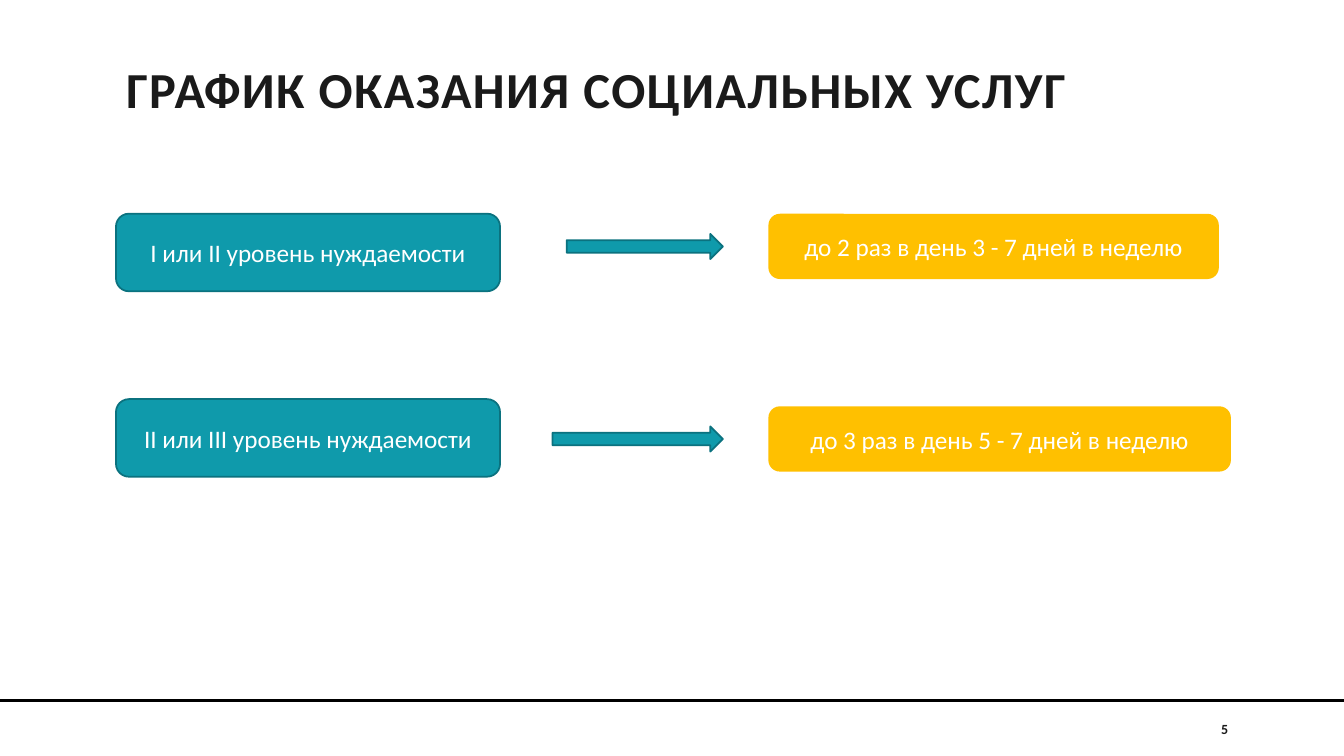
"""Build the slide with the schedule of social services."""
from dataclasses import dataclass

from lxml import etree
from pptx import Presentation, util as u
from pptx.dml.color import RGBColor
from pptx.enum import shapes, text
from pptx.oxml.ns import qn


@dataclass(frozen=True)
class Theme:
    font: str = "Calibri"
    ink: str = "1A1A1A"
    rule: str = "000000"
    white: str = "FFFFFF"
    teal: str = "0F9AAB"
    edge: str = "0B727F"
    gold: str = "FFC000"
    head: int = 36
    body: int = 18
    foot: int = 10
    thin: float = 1.25
    thick: float = 2.5


@dataclass(frozen=True)
class Box:
    left: float
    top: float
    width: float
    height: float

    def dims(self) -> list[u.Inches]:
        return [u.Inches(n) for n in (self.left, self.top, self.width, self.height)]


@dataclass(frozen=True)
class Row:
    level: str
    visits: str
    need: Box
    arrow: Box
    plan: Box


T = Theme()
WIDE, HIGH, LINE = 13.33, 7.5, 6.95
KIND = shapes.MSO_SHAPE
ROWS = [
    Row("I или II уровень нуждаемости", "до 2 раз в день 3 - 7 дней в неделю",
        Box(1.15, 2.12, 3.81, 0.77), Box(5.62, 2.32, 1.55, 0.25),
        Box(7.63, 2.13, 4.45, 0.63)),
    Row("II или III уровень нуждаемости", "до 3 раз в день 5 - 7 дней в неделю",
        Box(1.15, 3.96, 3.81, 0.77), Box(5.48, 4.23, 1.69, 0.25),
        Box(7.63, 4.04, 4.57, 0.63)),
]


def tint(code: str) -> RGBColor:
    return RGBColor.from_string(code)


def write(shape, words: str, *, size: int, color: str, bold: bool = False,
          align=text.PP_ALIGN.CENTER, anchor=text.MSO_ANCHOR.MIDDLE,
          lead: float = 1.0, space: int = 0) -> None:
    frame = shape.text_frame
    frame.word_wrap = True
    frame.auto_size = text.MSO_AUTO_SIZE.NONE
    frame.vertical_anchor = anchor
    para = frame.paragraphs[0]
    para.alignment, para.line_spacing = align, lead
    para.space_before = u.Pt(0)
    run = para.add_run()
    run.text = words
    font = run.font
    font.name, font.size, font.bold = T.font, u.Pt(size), bold
    font.color.rgb = tint(color)
    if space:
        run._r.get_or_add_rPr().set("spc", str(space * 100))


def draw(slide, kind, box: Box, fill: str, edge: str):
    shape = slide.shapes.add_shape(kind, *box.dims())
    shape.shadow.inherit = False
    shape.fill.solid()
    shape.fill.fore_color.rgb = tint(fill)
    shape.line.color.rgb = tint(edge)
    shape.line.width = u.Pt(T.thin)
    return shape


def title(slide) -> None:
    head = slide.shapes.title
    head.left, head.top, head.width, head.height = Box(1.15, 0.64, 11.06, 0.89).dims()
    write(head, "ГРАФИК ОКАЗАНИЯ СОЦИАЛЬНЫХ УСЛУГ", size=T.head, color=T.ink,
          bold=True, align=text.PP_ALIGN.LEFT, anchor=text.MSO_ANCHOR.TOP,
          lead=0.8, space=1)


def footer(slide) -> None:
    rule = slide.shapes.add_connector(
        shapes.MSO_CONNECTOR.STRAIGHT, u.Inches(0), u.Inches(LINE),
        u.Inches(WIDE), u.Inches(LINE))
    rule.line.color.rgb = tint(T.rule)
    rule.line.width = u.Pt(T.thick)
    etree.SubElement(rule._element.spPr, qn("a:effectLst"))
    page = slide.shapes.add_textbox(*Box(11.22, 7.08, 1.06, 0.3).dims())
    write(page, "5", size=T.foot, color=T.ink, bold=True, align=text.PP_ALIGN.RIGHT)


def chain(slide, row: Row) -> None:
    need = draw(slide, KIND.ROUNDED_RECTANGLE, row.need, T.teal, T.edge)
    write(need, row.level, size=T.body, color=T.white)
    draw(slide, KIND.RIGHT_ARROW, row.arrow, T.teal, T.edge)
    plan = draw(slide, KIND.ROUNDED_RECTANGLE, row.plan, T.gold, T.gold)
    write(plan, row.visits, size=T.body, color=T.white)


def main() -> None:
    deck = Presentation()
    deck.slide_width, deck.slide_height = u.Inches(WIDE), u.Inches(HIGH)
    slide = deck.slides.add_slide(deck.slide_layouts[5])
    title(slide)
    footer(slide)
    for row in ROWS:
        chain(slide, row)
    deck.save("out.pptx")


if __name__ == "__main__":
    main()
